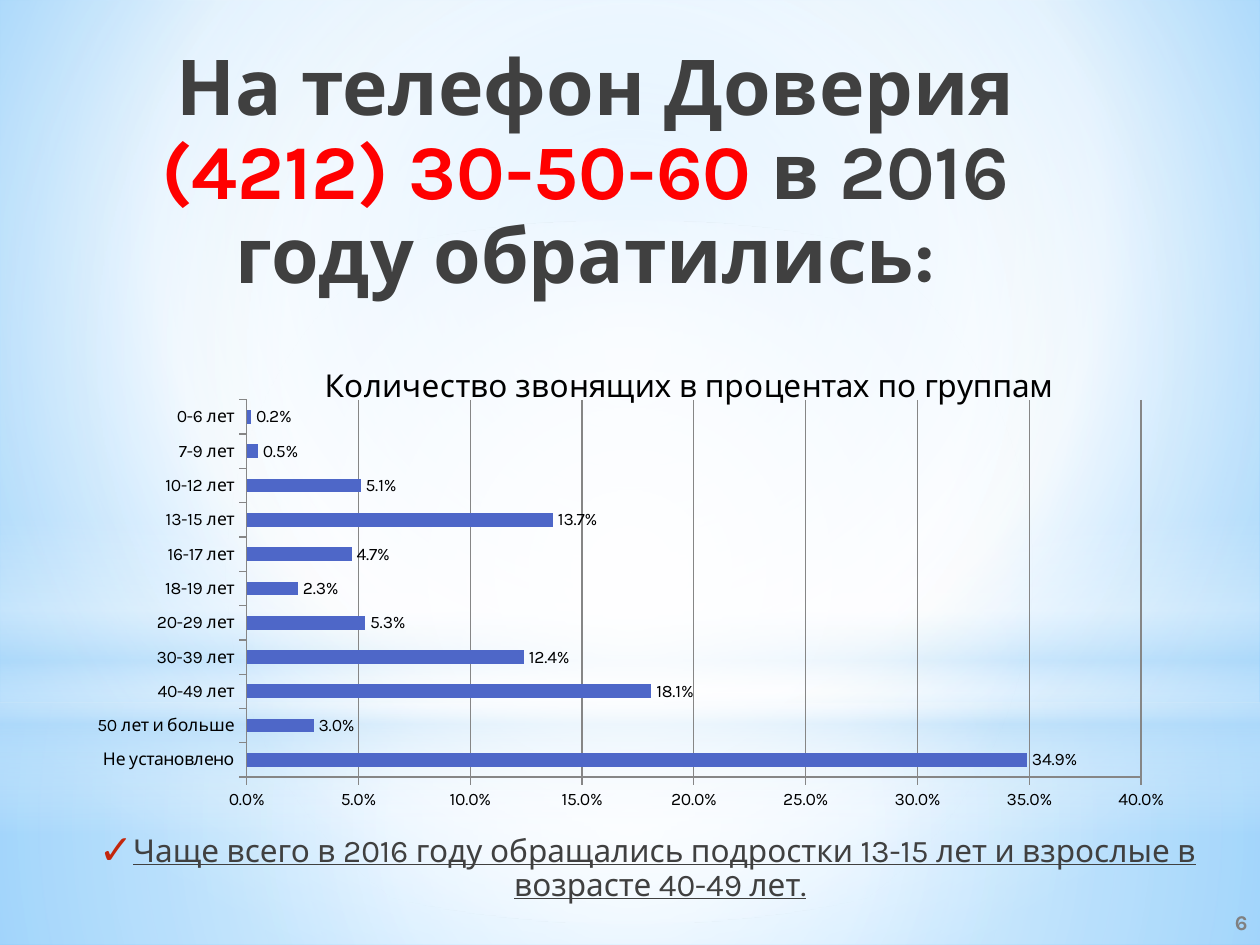
"""Build the slide on helpline callers by age group."""
from lxml import etree
from pptx import Presentation
from pptx.chart.data import CategoryChartData
from pptx.dml.color import RGBColor
from pptx.enum.chart import XL_CHART_TYPE, XL_LABEL_POSITION, XL_TICK_MARK
from pptx.enum.shapes import MSO_SHAPE
from pptx.enum.text import MSO_ANCHOR, MSO_AUTO_SIZE, PP_ALIGN
from pptx.oxml import parse_xml
from pptx.oxml.ns import nsdecls, qn
from pptx.util import Cm, Pt

RECT, OVAL = MSO_SHAPE.RECTANGLE, MSO_SHAPE.OVAL
BAR = XL_CHART_TYPE.BAR_CLUSTERED
OUTSIDE, TICK_OUT = XL_LABEL_POSITION.OUTSIDE_END, XL_TICK_MARK.OUTSIDE
TOP, MIDDLE = MSO_ANCHOR.TOP, MSO_ANCHOR.MIDDLE
CENTER, RIGHT = PP_ALIGN.CENTER, PP_ALIGN.RIGHT
NO_FIT = MSO_AUTO_SIZE.NONE

FONT = "Karla"
BLACK = RGBColor(0x00, 0x00, 0x00)
DARK = RGBColor(0x40, 0x40, 0x40)
GRAY = RGBColor(0x80, 0x80, 0x80)
GRID = RGBColor(0x86, 0x86, 0x86)
RED = RGBColor(0xFF, 0x00, 0x00)
BLUE = RGBColor(0x4E, 0x67, 0xC8)

TITLE = [(" ", 48, DARK), ("На телефон Доверия ", 44, DARK),
         ("(4212) 30-50-60", 44, RED), (" в 2016 году обратились:", 44, DARK)]
NOTE = ("Чаще всего в 2016 году обращались подростки 13-15 лет "
        "и взрослые в возрасте 40-49 лет.")
NUMBER = "6"
CHART_TITLE = "Количество звонящих в процентах по группам"
CALLERS = [("Не установлено", 0.349), ("50 лет и больше", 0.03),
           ("40-49 лет", 0.181), ("30-39 лет", 0.124), ("20-29 лет", 0.053),
           ("18-19 лет", 0.023), ("16-17 лет", 0.047), ("13-15 лет", 0.137),
           ("10-12 лет", 0.051), ("7-9 лет", 0.005), ("0-6 лет", 0.002)]

BACKDROP = [(0, "9ED5FF", 100), (60, "FFFFFF", 100), (100, "5BB9FF", 100)]
MID = (50, 50, 50, 50)
GLOWS = [
    (RECT, (0, 14.17, 25.4, 4.88), MID,
     [(0, "FFFFFF", 91), (37, "FFFFFF", 76), (100, "B4DCFA", 79)]),
    (RECT, (0, 0, 25.4, 14.17), MID,
     [(0, "FFFFFF", 89), (48, "FFFFFF", 62), (100, "B4DCFA", 79)]),
    (RECT, (0, 10.46, 25.4, 6.35), None,
     [(0, "FFFFFF", 0), (29, "FFFFFF", 30), (45, "B4DCFA", 40),
      (55, "FFFFFF", 26), (65, "B4DCFA", 60), (100, "FFFFFF", 0)]),
    (OVAL, (0, 4.45, 25.4, 14.17), MID,
     [(0, "FFFFFF", 100), (56, "FFFFFF", 0)]),
]


def box(*lengths):
    return [Cm(v) for v in lengths]


def set_gradient(fill, parent, stops, focus):
    fill.solid()
    gs = "".join(
        f'<a:gs pos="{pos * 1000}"><a:srgbClr val="{color}">'
        f'<a:alpha val="{alpha * 1000}"/></a:srgbClr></a:gs>'
        for pos, color, alpha in stops)
    shade = '<a:lin ang="5400000" scaled="0"/>'
    if focus:
        sides = " ".join(f'{k}="{v * 1000}"' for k, v in zip("ltrb", focus))
        shade = f'<a:path path="circle"><a:fillToRect {sides}/></a:path>'
    grad = parse_xml(f'<a:gradFill {nsdecls("a")} rotWithShape="1">'
                     f'<a:gsLst>{gs}</a:gsLst>{shade}</a:gradFill>')
    parent.replace(parent.find(qn("a:solidFill")), grad)


def style(font, size, color, bold=False):
    font.name, font.size, font.bold = FONT, Pt(size), bold
    font.color.rgb = color


def place(sp, lengths, anchor):
    sp.left, sp.top, sp.width, sp.height = box(*lengths)
    tf = sp.text_frame
    tf.word_wrap, tf.auto_size, tf.vertical_anchor = True, NO_FIT, anchor
    return tf


def set_layout(parent, after, inner=False, **parts):
    for old in parent.findall(qn("c:layout")):
        parent.remove(old)
    target = '<c:layoutTarget val="inner"/>' if inner else ""
    modes = "".join(f'<c:{k}Mode val="edge"/>' for k in "xy")
    sizes = "".join(f'<c:{k} val="{v}"/>' for k, v in parts.items())
    layout = parse_xml(f'<c:layout {nsdecls("c")}><c:manualLayout>{target}'
                       f'{modes}{sizes}</c:manualLayout></c:layout>')
    parent.insert(after, layout)


def add_title(s):
    tf = place(s.shapes.title, (1.5, 0.53, 20.6, 3.18), TOP)
    tf.margin_top = Cm(0.33)
    p = tf.paragraphs[0]
    p.alignment, p.line_spacing = CENTER, 0.9
    for text, size, color in TITLE:
        r = p.add_run()
        r.text = text
        style(r.font, size, color, True)


def add_note(s):
    tf = place(s.placeholders[1], (1.09, 16.71, 23.8, 3.45), TOP)
    tf.text = NOTE
    p = tf.paragraphs[0]
    p.alignment, p.line_spacing, p.space_after = CENTER, 0.9, Pt(3)
    style(p.runs[0].font, 18, DARK)
    p.runs[0].font.underline = True
    pPr = p._p.get_or_add_pPr()
    pPr.set("marL", str(Cm(0.64)))
    pPr.set("indent", str(Cm(-0.51)))
    color = etree.SubElement(pPr, qn("a:buClr"))
    etree.SubElement(color, qn("a:srgbClr"), val="C3260C")
    etree.SubElement(pPr, qn("a:buSzPct"), val="130000")
    etree.SubElement(pPr, qn("a:buChar"), char="✓")


def add_callers_chart(s):
    data = CategoryChartData(number_format="0.0%")
    data.categories = [name for name, _ in CALLERS]
    data.add_series("Series 1", [share for _, share in CALLERS])
    chart = s.shapes.add_chart(BAR, *box(1.5, 6.53, 22.4, 10.01), data).chart
    style(chart.font, 10, BLACK)
    chart.has_legend = False
    chart.has_title = True
    tf = chart.chart_title.text_frame
    tf.text = CHART_TITLE
    style(tf.paragraphs[0].runs[0].font, 18, BLACK)
    set_layout(chart.chart_title._element, 1, x=0.22, y=0.07)

    plot = chart.plots[0]
    plot.gap_width, plot.vary_by_categories = 150, False
    fill = plot.series[0].format.fill
    fill.solid()
    fill.fore_color.rgb = BLUE
    plot.has_data_labels = True
    labels = plot.data_labels
    labels.show_value, labels.position = True, OUTSIDE
    labels.number_format, labels.number_format_is_linked = "0.0%", False
    style(labels.font, 10, BLACK)

    values = chart.value_axis
    values.minimum_scale, values.maximum_scale, values.major_unit = 0, 0.4, 0.05
    values.has_major_gridlines = True
    values.tick_labels.number_format = "0.0%"
    values.tick_labels.number_format_is_linked = False
    for axis in (values, chart.category_axis):
        axis.major_tick_mark = TICK_OUT
    for part in (values, chart.category_axis, values.major_gridlines):
        part.format.line.color.rgb = GRID
        part.format.line.width = Pt(0.75)
    area = chart._chartSpace.find(f".//{qn('c:plotArea')}")
    set_layout(area, 0, True, x=0.155, y=0.153, w=0.805, h=0.76)


def add_number(s):
    lengths = (20.32, 18.08, 5.08, 1.02)
    tf = place(s.shapes.add_textbox(*box(*lengths)), lengths, MIDDLE)
    tf.text = NUMBER
    p = tf.paragraphs[0]
    p.alignment = RIGHT
    style(p.runs[0].font, 12, GRAY, True)


def main():
    prs = Presentation()
    prs.slide_width, prs.slide_height = box(25.4, 19.05)
    s = prs.slides.add_slide(prs.slide_layouts[1])
    fill = s.background.fill
    fill.solid()
    set_gradient(fill, s.element.find(f".//{qn('p:bgPr')}"), BACKDROP,
                 (20, 10, 20, 60))
    texts = list(s.placeholders)
    for kind, lengths, focus, stops in GLOWS:
        sp = s.shapes.add_shape(kind, *box(*lengths))
        sp.shadow.inherit = False
        sp.line.fill.background()
        set_gradient(sp.fill, sp.element.spPr, stops, focus)
    for sp in texts:
        s.shapes.element.append(sp.element)
    add_title(s)
    add_note(s)
    add_callers_chart(s)
    add_number(s)
    prs.save("out.pptx")


if __name__ == "__main__":
    main()
